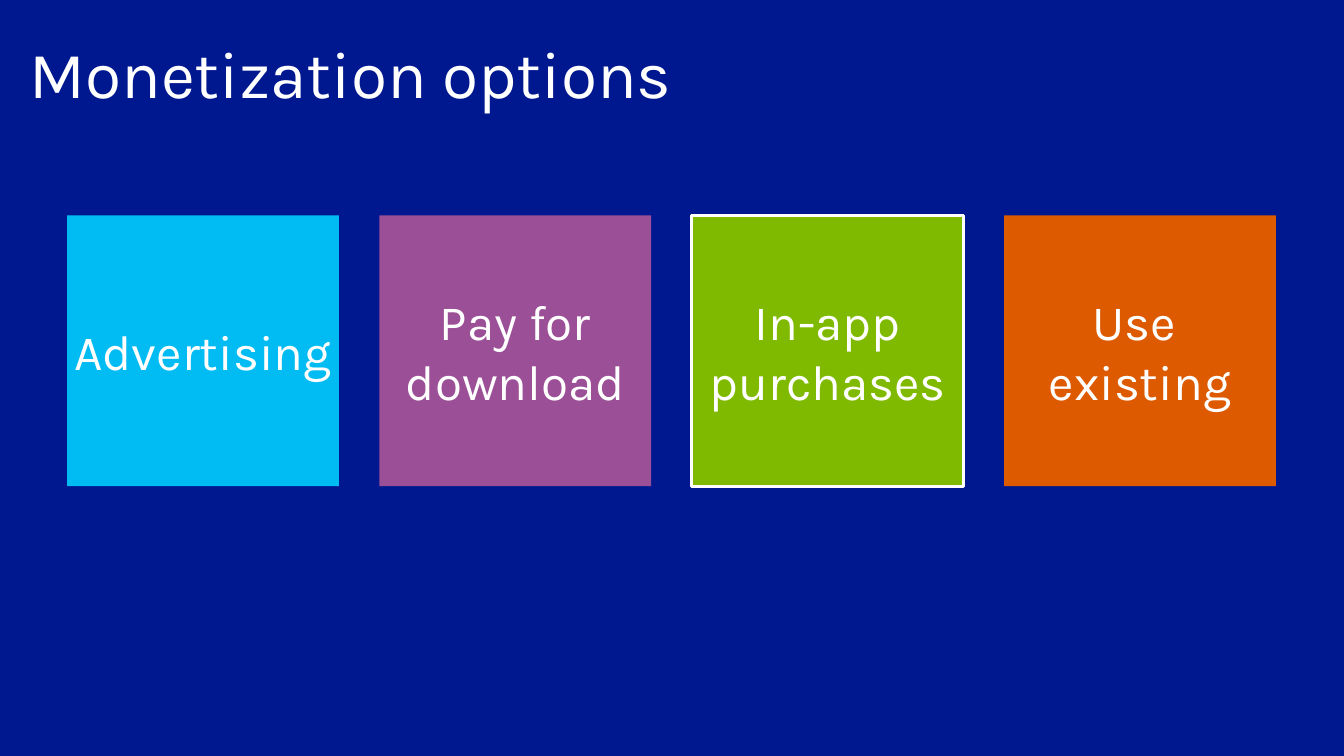
from dataclasses import dataclass

from pptx import Presentation
from pptx import util as u
from pptx.dml.color import RGBColor
from pptx.enum import shapes, text


@dataclass(frozen=True)
class Theme:
    """Colours, font and type sizes of the slide."""
    background: str = "00188F"
    ink: str = "FFFFFF"
    font: str = "Karla"
    title_size: int = 48
    tile_size: int = 36
    outline_width: float = 2.25


THEME = Theme()
OPTIONS = [
    (["Advertising"], "00BCF2"),
    (["Pay for download"], "9B4F96"),
    (["In-app purchases"], "7FBA00"),
    (["Use ", "existing"], "DE5A00"),
]
HIGHLIGHTED = 2


def paint(fill, colour):
    """Give a fill one solid colour."""
    fill.solid()
    fill.fore_color.rgb = RGBColor.from_string(colour)


def write(shape, lines, size, anchor, align):
    """Write lines into a shape, one paragraph each."""
    frame = shape.text_frame
    layout = dict(word_wrap=True, vertical_anchor=anchor, margin_left=0,
                  margin_right=0, margin_top=0, margin_bottom=0)
    for name, value in layout.items():
        setattr(frame, name, value)
    frame.text = "\n".join(lines)
    for para in frame.paragraphs:
        para.alignment = align
        for span in para.runs:
            for name, value in dict(name=THEME.font, size=u.Pt(size)).items():
                setattr(span.font, name, value)
            span.font.color.rgb = RGBColor.from_string(THEME.ink)


def add_title(page, box, wording):
    """Place the slide title in the given box."""
    title = page.shapes.add_textbox(*map(u.Inches, box))
    write(title, [wording], THEME.title_size,
          text.MSO_ANCHOR.TOP, text.PP_ALIGN.LEFT)


def add_rectangle(page, box):
    """Add a rectangle without fill, line or shadow."""
    rectangle = page.shapes.add_shape(
        shapes.MSO_SHAPE.RECTANGLE, *map(u.Inches, box))
    rectangle.shadow.inherit = False
    rectangle.fill.background()
    rectangle.line.fill.background()
    return rectangle


def add_tiles(page, box, tile_width, options, highlighted):
    """Spread option tiles evenly across a box and outline one of them."""
    left, top, width, height = box
    pitch = (width - tile_width) / (len(options) - 1)
    places = [(left + i * pitch, top, tile_width, height)
              for i in range(len(options))]
    for place, (lines, colour) in zip(places, options):
        tile = add_rectangle(page, place)
        paint(tile.fill, colour)
        write(tile, lines, THEME.tile_size,
              text.MSO_ANCHOR.MIDDLE, text.PP_ALIGN.CENTER)
    outline = add_rectangle(page, places[highlighted])
    paint(outline.line.fill, THEME.ink)
    outline.line.width = u.Pt(THEME.outline_width)


def main():
    """Build the deck and save it."""
    deck = Presentation()
    deck.slide_width, deck.slide_height = u.Inches(13.6), u.Inches(7.65)
    page = deck.slides.add_slide(deck.slide_layouts[6])
    paint(page.background.fill, THEME.background)
    add_title(page, (0.3, 0.33, 13, 1), "Monetization options")
    add_tiles(page, (0.68, 2.18, 12.23, 2.74), 2.75, OPTIONS, HIGHLIGHTED)
    deck.save("out.pptx")


if __name__ == "__main__":
    main()
